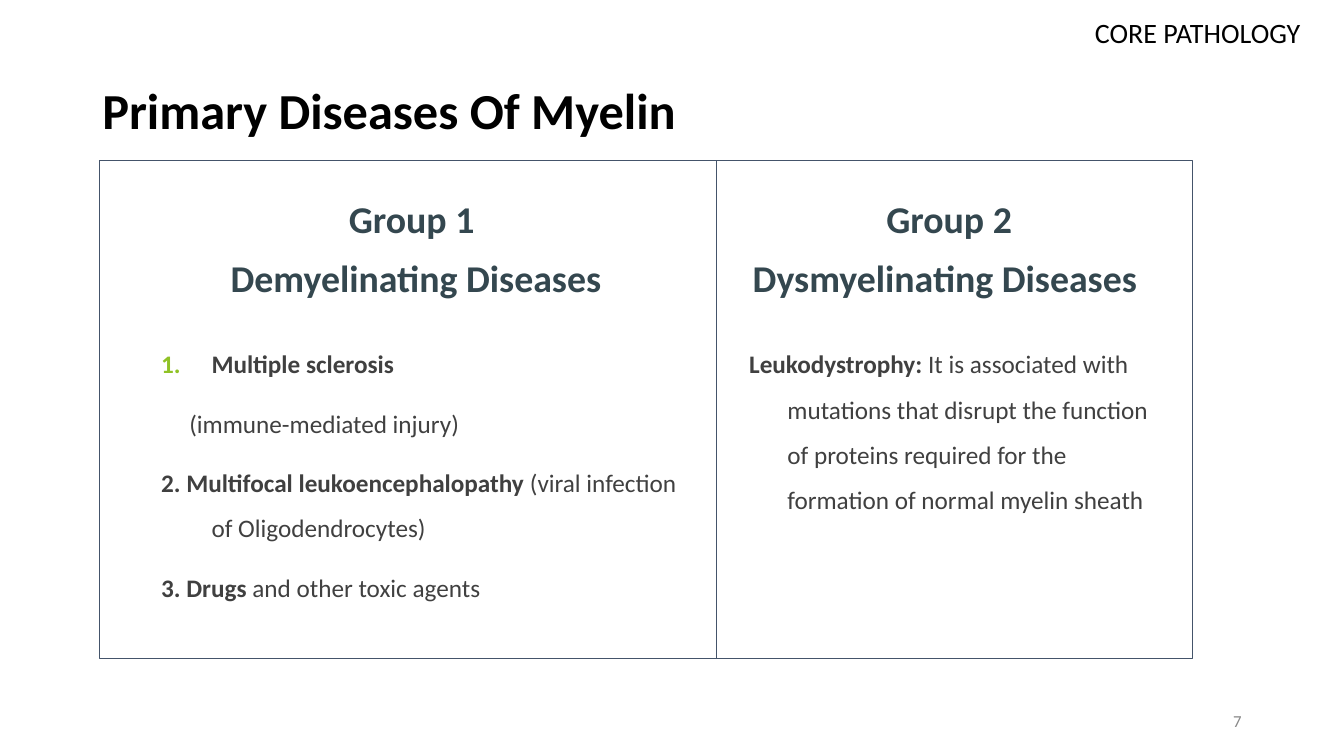
from dataclasses import dataclass

from lxml import etree
from pptx import Presentation
from pptx.dml.color import RGBColor
from pptx.enum.shapes import MSO_CONNECTOR, MSO_SHAPE
from pptx.enum.text import MSO_ANCHOR, PP_ALIGN
from pptx.oxml.ns import qn
from pptx.util import Inches, Pt

RECTANGLE = MSO_SHAPE.RECTANGLE
STRAIGHT = MSO_CONNECTOR.STRAIGHT
TOP, MIDDLE = MSO_ANCHOR.TOP, MSO_ANCHOR.MIDDLE
LEFT, CENTER, RIGHT = PP_ALIGN.LEFT, PP_ALIGN.CENTER, PP_ALIGN.RIGHT

WIDTH, HEIGHT = Inches(13.33), Inches(7.5)
COLUMNS, ROWS = 160, 90
FONT = "Calibri"
COLORS = {
    "paper": "FFFFFF",
    "ink": "000000",
    "rule": "44546A",
    "heading": "34474F",
    "body": "404040",
    "number": "90C226",
    "footer": "888888",
}


@dataclass(frozen=True)
class Area:
    column: float
    row: float
    columns: float
    rows: float


@dataclass(frozen=True)
class Style:
    size: int
    color: str
    bold: bool = False
    align: PP_ALIGN = LEFT
    anchor: MSO_ANCHOR = TOP
    line_spacing: float = 1.0
    inset: float = 0.05


@dataclass(frozen=True)
class Line:
    strong: str = ""
    plain: str = ""
    hanging: float = 0
    first_offset: float = 0
    numbered: bool = False


@dataclass(frozen=True)
class Group:
    heading_area: Area
    heading: tuple[str, str]
    body_area: Area
    body: tuple[Line, ...]


TITLE = Style(36, "ink", bold=True, anchor=MIDDLE, line_spacing=0.9)
SECTION = Style(20, "ink", align=RIGHT, inset=0.1)
PAGE = Style(12, "footer", align=RIGHT, anchor=MIDDLE)
HEADING = Style(27, "heading", bold=True, align=CENTER, anchor=MIDDLE)
BODY = Style(18, "body", line_spacing=1.5)

FRAME = Area(11.9, 19.1, 130.1, 59.3)
DIVIDER_COLUMN = 85.3

LABELS = (
    (Area(11, 4.8, 138, 17.4), "Primary Diseases Of Myelin", TITLE),
    (Area(113, 83.4, 36, 4.8), "7", PAGE),
    (Area(114.4, 0.7, 41.6, 10.9), "CORE PATHOLOGY", SECTION),
)

GROUPS = (
    Group(
        Area(19, 20, 60, 19),
        ("Group 1", " Demyelinating Diseases"),
        Area(18, 39.1, 66, 36),
        (
            Line("Multiple sclerosis", "", 0.5, -0.5, numbered=True),
            Line("", "(immune-mediated injury)", 0.5, -0.22),
            Line("2. Multifocal leukoencephalopathy",
                 " (viral infection of Oligodendrocytes)", 0.5, -0.5),
            Line("3. Drugs ", "and other toxic agents", 0.5, -0.5),
        ),
    ),
    Group(
        Area(85, 20, 56, 19),
        ("Group 2", "Dysmyelinating Diseases "),
        Area(88, 39.1, 50, 36),
        (
            Line("Leukodystrophy: ",
                 "It is associated with mutations that disrupt the function of "
                 "proteins required for the formation of normal myelin sheath",
                 0.38, -0.38),
        ),
    ),
)


def across(columns: float) -> int:
    return round(WIDTH * columns / COLUMNS)


def down(rows: float) -> int:
    return round(HEIGHT * rows / ROWS)


def place(area: Area) -> tuple[int, int, int, int]:
    return across(area.column), down(area.row), across(area.columns), down(area.rows)


def color(name: str) -> RGBColor:
    return RGBColor.from_string(COLORS[name])


def add_panel(slide, area: Area, outlined: bool):
    panel = slide.shapes.add_shape(RECTANGLE, *place(area))
    panel.shadow.inherit = False
    panel.fill.solid()
    panel.fill.fore_color.rgb = color("paper")
    if outlined:
        panel.line.color.rgb = color("rule")
        panel.line.width = Pt(0.75)
    else:
        panel.line.fill.background()
    return panel


def indent(paragraph, line: Line) -> None:
    properties = paragraph._p.get_or_add_pPr()
    properties.set("marL", str(Inches(line.hanging)))
    properties.set("indent", str(Inches(line.first_offset)))
    if line.numbered:
        tint = etree.SubElement(properties, qn("a:buClr"))
        etree.SubElement(tint, qn("a:srgbClr"), val=COLORS["number"])
        etree.SubElement(properties, qn("a:buAutoNum"), type="arabicPeriod")


def write(holder, lines: tuple[Line, ...], style: Style) -> None:
    frame = holder.text_frame
    frame.word_wrap = True
    frame.vertical_anchor = style.anchor
    frame.margin_left = frame.margin_right = Inches(0.1)
    frame.margin_top = frame.margin_bottom = Inches(style.inset)
    for position, line in enumerate(lines):
        paragraph = frame.add_paragraph() if position else frame.paragraphs[0]
        if line.hanging:
            indent(paragraph, line)
        paragraph.alignment = style.align
        paragraph.line_spacing = style.line_spacing
        if position:
            paragraph.space_before = Pt(10)
        paragraph.font.name = FONT
        paragraph.font.size = Pt(style.size)
        paragraph.font.color.rgb = color(style.color)
        paragraph.font.bold = style.bold
        for wording, bold in ((line.strong, True), (line.plain, style.bold)):
            if wording:
                run = paragraph.add_run()
                run.text = wording
                if bold != style.bold:
                    run.font.bold = bold


def add_text(slide, area: Area, lines: tuple[Line, ...], style: Style) -> None:
    write(slide.shapes.add_textbox(*place(area)), lines, style)


def add_divider(slide) -> None:
    x = across(DIVIDER_COLUMN)
    divider = slide.shapes.add_connector(
        STRAIGHT, x, down(FRAME.row), x, down(FRAME.row + FRAME.rows))
    divider.line.color.rgb = color("rule")
    divider.line.width = Pt(0.75)
    etree.SubElement(divider._element.spPr, qn("a:effectLst"))


def main() -> None:
    deck = Presentation()
    deck.slide_width, deck.slide_height = WIDTH, HEIGHT
    slide = deck.slides.add_slide(deck.slide_layouts[6])
    add_panel(slide, FRAME, outlined=True)
    for area, wording, style in LABELS:
        add_text(slide, area, (Line(plain=wording),), style)
    for group in GROUPS:
        heading = add_panel(slide, group.heading_area, outlined=False)
        write(heading, tuple(Line(plain=wording) for wording in group.heading), HEADING)
        add_text(slide, group.body_area, group.body, BODY)
    add_divider(slide)
    deck.save("out.pptx")


if __name__ == "__main__":
    main()
